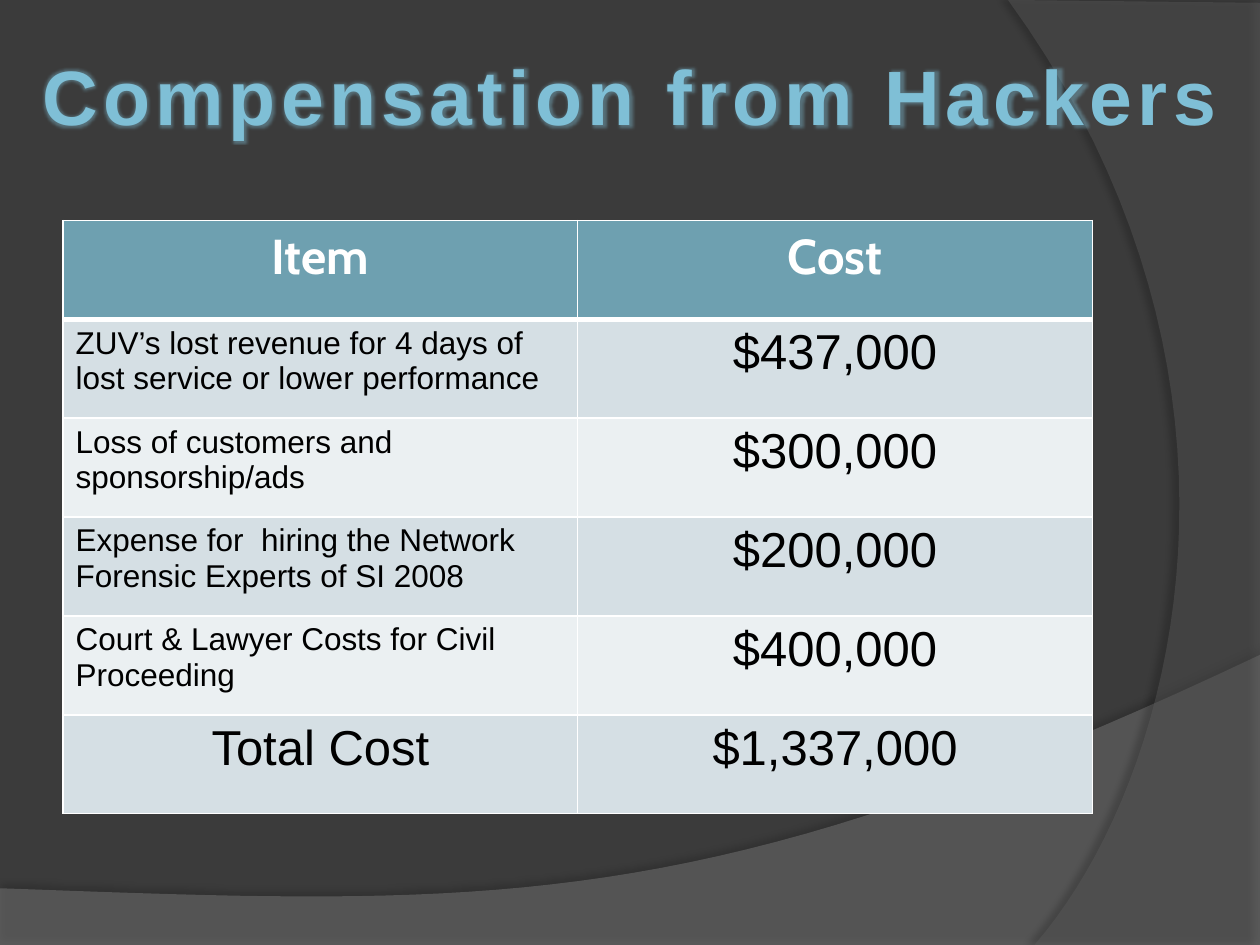
from dataclasses import dataclass

from lxml import etree
from pptx import Presentation
from pptx.dml.color import RGBColor
from pptx.enum.text import MSO_ANCHOR, MSO_AUTO_SIZE, PP_ALIGN
from pptx.oxml.ns import qn
from pptx.util import Inches, Pt

LEFT, CENTER = PP_ALIGN.LEFT, PP_ALIGN.CENTER
TOP, MIDDLE = MSO_ANCHOR.TOP, MSO_ANCHOR.MIDDLE
WIDE, HIGH = Inches(10), Inches(7.5)
STEPS = 40
HEX = {
    "back": "3B3B3B", "wave": "7F7F7F", "arc": "5E5E5E", "shade": "000000",
    "title": "7FBFD6", "head": "6EA0B0", "odd": "D5DFE4", "even": "EBF0F2",
    "white": "FFFFFF", "ink": "000000",
}

Point = tuple[float, float]


@dataclass
class Swoop:
    color: str
    alpha: int
    shade: int
    dist: float
    angle: int
    curve: list[Point]
    edge: list[Point]


@dataclass
class Entry:
    item: str
    cost: str
    size: int = 18
    align: PP_ALIGN = LEFT
    font: str = "Arial"
    ink: str = "ink"
    bold: bool = False


SWOOPS = [
    Swoop("wave", 45, 35, 3.5, 270,
          [(1, 0.693), (0.559, 0.972), (0.391, 0.959), (0, 0.94)],
          [(0, 1), (1, 1)]),
    Swoop("arc", 40, 45, 4, 180,
          [(0.821, 1), (0.935, 0.825), (1.018, 0.4), (0.8, 0)],
          [(1, 0.003), (1, 1)]),
]
ENTRIES = [
    Entry("Item", "Cost", 28, CENTER, "Cabin", "white", True),
    Entry("ZUV’s lost revenue for 4 days of lost service or lower performance",
          "$437,000"),
    Entry("Loss of customers and sponsorship/ads", "$300,000"),
    Entry("Expense for  hiring the Network Forensic Experts of SI 2008",
          "$200,000"),
    Entry("Court & Lawyer Costs for Civil Proceeding", "$400,000"),
    Entry("Total Cost", "$1,337,000", 28, CENTER),
]


def rgb(name: str) -> RGBColor:
    return RGBColor.from_string(HEX[name])


def apply(target, values: dict) -> None:
    for key, value in values.items():
        setattr(target, key, value)


def add(parent, tag: str, **attrs):
    return etree.SubElement(parent, qn(tag),
                            {key: str(val) for key, val in attrs.items()})


def tint(parent, name: str, alpha: int) -> None:
    color = add(parent, "a:srgbClr", val=HEX[name])
    add(color, "a:alpha", val=alpha * 1000)


def bend(pts: list[Point], t: float) -> Point:
    while len(pts) > 1:
        pts = [(a + (c - a) * t, b + (d - b) * t)
               for (a, b), (c, d) in zip(pts, pts[1:])]
    return pts[0]


def draw_swoop(slide, swoop: Swoop) -> None:
    line = [bend(swoop.curve, n / STEPS) for n in range(STEPS + 1)]
    start, *rest = [(round(x * WIDE), round(y * HIGH))
                    for x, y in line + swoop.edge]
    form = slide.shapes.build_freeform(*start)
    form.add_line_segments(rest, close=True)
    shape = form.convert_to_shape()
    shape.line.fill.background()
    shape.fill.solid()
    shape.fill.fore_color.rgb = rgb(swoop.color)
    shape.shadow.inherit = False
    props = shape._element.spPr
    color = props.find(qn("a:solidFill"))[0]
    add(color, "a:alpha", val=swoop.alpha * 1000)
    shade = add(props.find(qn("a:effectLst")), "a:outerShdw",
                blurRad=Pt(4), dist=Pt(swoop.dist),
                dir=swoop.angle * 60000, rotWithShape=0)
    tint(shade, "shade", swoop.shade)


def edge(cell, low: int) -> None:
    props = cell._tc.get_or_add_tcPr()
    for spot, side in enumerate("LRTB"):
        width = low if side == "B" else 1
        line = add(props, f"a:ln{side}", w=Pt(width))
        add(add(line, "a:solidFill"), "a:srgbClr", val=HEX["white"])
        props.insert(spot, line)


def draw_cell(cell, text: str, fill: str, low: int, align: PP_ALIGN,
              look: dict, ink: str) -> None:
    cell.fill.solid()
    cell.fill.fore_color.rgb = rgb(fill)
    edge(cell, low)
    cell.vertical_anchor = TOP
    para = cell.text_frame.paragraphs[0]
    para.alignment = align
    run = para.add_run()
    run.text = text
    apply(run.font, look)
    run.font.color.rgb = rgb(ink)


def draw_table(slide, rows: list[Entry]) -> None:
    wide, high = round(WIDE * 0.817), round(HIGH * 0.628)
    table = slide.shapes.add_table(len(rows), 2, round(WIDE * 0.05),
                                   round(HIGH * 0.7 / 3), wide, high).table
    for n, row in enumerate(rows):
        fill = "head" if n == 0 else "odd" if n % 2 else "even"
        low = 3 if n == 0 else 1
        look = {"name": row.font, "bold": row.bold}
        draw_cell(table.cell(n, 0), row.item, fill, low, row.align,
                  look | {"size": Pt(row.size)}, row.ink)
        draw_cell(table.cell(n, 1), row.cost, fill, low, CENTER,
                  look | {"size": Pt(28)}, row.ink)


def draw_title(slide, text: str) -> None:
    title = slide.shapes.title
    apply(title, {"left": round(WIDE * 0.017), "top": round(HIGH * 0.044),
                  "width": round(WIDE * 0.966), "height": round(HIGH * 0.112)})
    frame = title.text_frame
    apply(frame, {"word_wrap": False, "auto_size": MSO_AUTO_SIZE.NONE,
                  "vertical_anchor": MIDDLE})
    para = frame.paragraphs[0]
    para.alignment = CENTER
    run = para.add_run()
    run.text = text
    apply(run.font, {"name": "Arial", "size": Pt(44), "bold": True})
    run.font.color.rgb = rgb("title")
    props = run._r.get_or_add_rPr()
    props.set("spc", "300")
    glow = add(props, "a:effectLst")
    tint(add(glow, "a:glow", rad=Pt(4)), "title", 40)
    props.insert(1, glow)
    slide.shapes._spTree.append(title._element)


def main() -> None:
    deck = Presentation()
    apply(deck, {"slide_width": WIDE, "slide_height": HIGH})
    slide = deck.slides.add_slide(deck.slide_layouts[5])
    slide.background.fill.solid()
    slide.background.fill.fore_color.rgb = rgb("back")
    for swoop in SWOOPS:
        draw_swoop(slide, swoop)
    draw_table(slide, ENTRIES)
    draw_title(slide, "Compensation from Hackers")
    deck.save("out.pptx")


if __name__ == "__main__":
    main()
